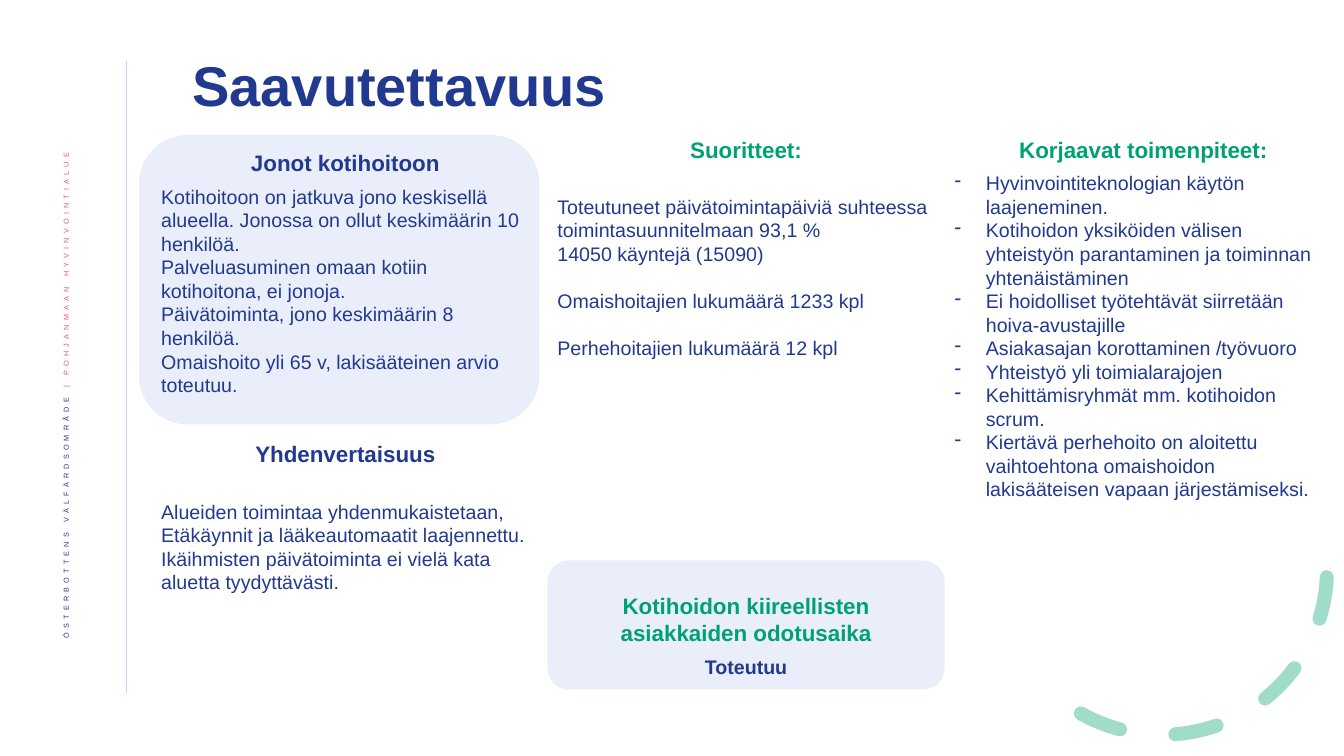
import pptx
import pptx.dml.color
import pptx.enum.dml
import pptx.enum.shapes
import pptx.enum.text
import pptx.oxml
import pptx.oxml.ns
import pptx.util

COLORS = {"navy": "213A8F", "green": "00A174", "coral": "EB5C5F", "lavender": "C9D2F2"}
WIDTH, HEIGHT = 13.33, 7.5
# Three content columns: left edge and width
QUEUES, OUTPUTS, ACTIONS = (1.5, 3.85), (5.43, 3.94), (9.37, 3.94)
BLANK_LINE = 16.8  # points
ALIGN = pptx.enum.text.PP_ALIGN
PRESET = pptx.enum.shapes.MSO_SHAPE


def inches(*lengths):
    return [pptx.util.Inches(length) for length in lengths]


def rgb(color):
    return pptx.dml.color.RGBColor.from_string(COLORS[color])


def add_xml(parent, tag, **attributes):
    child = pptx.oxml.parse_xml(f"<a:{tag} {pptx.oxml.ns.nsdecls('a')}/>")
    for key, value in attributes.items():
        child.set(key, value)
    parent.append(child)
    return child


def set_alpha(color_format, percent):
    fill = color_format.find(".//" + pptx.oxml.ns.qn("a:srgbClr"))
    add_xml(fill, "alpha", val=str(percent * 1000))


def set_font(font, size, color="navy", bold=False):
    font.name = "Arial"
    font.size = pptx.util.Pt(size)
    font.bold = bold
    font.color.rgb = rgb(color)


def add_frame(slide, left, top, width, height):
    frame = slide.shapes.add_textbox(*inches(left, top, width, height)).text_frame
    frame.word_wrap = True
    return frame


def add_heading(frame, text, color, line_spacing=1.0):
    heading = frame.paragraphs[0]
    heading.text = text
    heading.alignment = ALIGN.CENTER
    heading.line_spacing = line_spacing
    heading.space_after = pptx.util.Pt(6)
    set_font(heading.font, 16, color, bold=True)


def add_body(frame, text, gap=False, dashed=False):
    body = frame.add_paragraph()
    body.text = text
    if gap:
        body.space_before = pptx.util.Pt(BLANK_LINE)
    if dashed:
        properties = body._p.get_or_add_pPr()
        indent = pptx.util.Inches(0.31)
        properties.set("marL", str(indent))
        properties.set("indent", str(-indent))
        add_xml(properties, "buChar", char="-")
    set_font(body.font, 14)
    return body


def add_panel(slide, left, top, width, height):
    panel = slide.shapes.add_shape(PRESET.ROUNDED_RECTANGLE, *inches(left, top, width, height))
    panel.shadow.inherit = False
    panel.line.fill.background()
    panel.fill.solid()
    panel.fill.fore_color.rgb = rgb("lavender")
    set_alpha(panel._element.spPr, 38)


def add_side_rule(slide):
    rule = slide.shapes.add_connector(
        pptx.enum.shapes.MSO_CONNECTOR.STRAIGHT, *inches(1.25, 0.61, 1.25, 6.88))
    rule.line.color.rgb = rgb("lavender")
    rule.line.width = pptx.util.Pt(0.5)
    add_xml(rule._element.spPr, "effectLst")


def add_side_label(slide):
    frame = add_frame(slide, 0.42, 1.42, 0.52, 5.73)
    frame.vertical_anchor = pptx.enum.text.MSO_ANCHOR.MIDDLE
    frame._txBody.bodyPr.set("vert", "vert270")
    label = frame.paragraphs[0]
    label.alignment = ALIGN.RIGHT
    label.line_spacing = 0.9
    for text, color in (("ÖSTERBOTTENS VÄLFÄRDSOMRÅDE ", "navy"),
                        ("| POHJANMAAN HYVINVOINTIALUE", "coral")):
        run = label.add_run()
        run.text = text
        set_font(run.font, 9, color)
        properties = run._r.get_or_add_rPr()
        properties.set("baseline", "30000")
        properties.set("spc", "300")


def add_dashed_arc(slide):
    arc = slide.shapes.add_shape(PRESET.ARC, *inches(9.89, 4.02, 3.27, 3.27))
    arc.shadow.inherit = False
    arc.rotation = 98.9
    arc.adjustments[0] = 158.174
    arc.adjustments[1] = 17.814
    arc.fill.background()
    arc.line.color.rgb = rgb("green")
    arc.line.width = pptx.util.Pt(10)
    arc.line.dash_style = pptx.enum.dml.MSO_LINE.DASH
    outline = arc.line._get_or_add_ln()
    outline.set("cap", "rnd")
    set_alpha(outline, 36)


def add_title(slide):
    frame = add_frame(slide, 1.81, 0.45, 10.2, 0.85)
    frame.vertical_anchor = pptx.enum.text.MSO_ANCHOR.MIDDLE
    title = frame.paragraphs[0]
    title.text = "Saavutettavuus"
    title.line_spacing = 0.9
    set_font(title.font, 40, bold=True)


def add_section(slide, column, top, height, heading, color, lines,
                line_spacing=1.0, gaps=(), dashed=False):
    left, width = column
    frame = add_frame(slide, left, top, width, height)
    add_heading(frame, heading, color, line_spacing)
    for index, line in enumerate(lines):
        add_body(frame, line, index in gaps, dashed)
    return frame


def main():
    deck = pptx.Presentation()
    deck.slide_width, deck.slide_height = inches(WIDTH, HEIGHT)
    slide = deck.slides.add_slide(deck.slide_layouts[6])

    # Frame and decoration
    add_side_rule(slide)
    add_side_label(slide)
    add_dashed_arc(slide)
    add_title(slide)

    # Left column: queues and equality
    add_panel(slide, 1.38, 1.34, 3.97, 2.87)
    add_section(slide, QUEUES, 1.46, 2.55, "Jonot kotihoitoon", "navy", [
        "Kotihoitoon on jatkuva jono keskisellä alueella. "
        "Jonossa on ollut keskimäärin 10 henkilöä.",
        "Palveluasuminen omaan kotiin kotihoitona, ei jonoja.",
        "Päivätoiminta, jono keskimäärin 8 henkilöä.",
        "Omaishoito yli 65 v, lakisääteinen arvio toteutuu.",
    ], line_spacing=0.9)
    add_section(slide, QUEUES, 4.35, 1.61, "Yhdenvertaisuus", "navy", [
        "Alueiden toimintaa yhdenmukaistetaan, "
        "Etäkäynnit ja lääkeautomaatit laajennettu.",
        "Ikäihmisten päivätoiminta ei vielä kata aluetta tyydyttävästi.",
    ], line_spacing=0.9, gaps=(0,))

    # Middle column: outputs and waiting time
    add_section(slide, OUTPUTS, 1.3, 2.57, "Suoritteet:", "green", [
        "Toteutuneet päivätoimintapäiviä suhteessa toimintasuunnitelmaan 93,1 %",
        "14050 käyntejä (15090)",
        "Omaishoitajien lukumäärä 1233\u00a0kpl".replace("\u00a0", " "),
        "Perhehoitajien lukumäärä 12 kpl",
    ], gaps=(0, 2, 3))
    left, width = OUTPUTS
    add_panel(slide, left, 5.56, width, 1.28)
    waiting = add_section(slide, OUTPUTS, 5.83, 0.96,
                          "Kotihoidon kiireellisten asiakkaiden odotusaika", "green", ["Toteutuu"])
    waiting.paragraphs[-1].alignment = ALIGN.CENTER
    waiting.paragraphs[-1].font.bold = True

    # Right column: corrective actions
    add_section(slide, ACTIONS, 1.3, 3.99, "Korjaavat toimenpiteet:", "green", [
        "Hyvinvointiteknologian käytön laajeneminen.",
        "Kotihoidon yksiköiden välisen yhteistyön parantaminen ja toiminnan yhtenäistäminen",
        "Ei hoidolliset työtehtävät siirretään hoiva-avustajille",
        "Asiakasajan korottaminen /työvuoro",
        "Yhteistyö yli toimialarajojen",
        "Kehittämisryhmät mm. kotihoidon scrum.",
        "Kiertävä perhehoito on aloitettu vaihtoehtona omaishoidon lakisääteisen vapaan järjestämiseksi.",
    ], dashed=True)

    deck.save("out.pptx")


if __name__ == "__main__":
    main()
